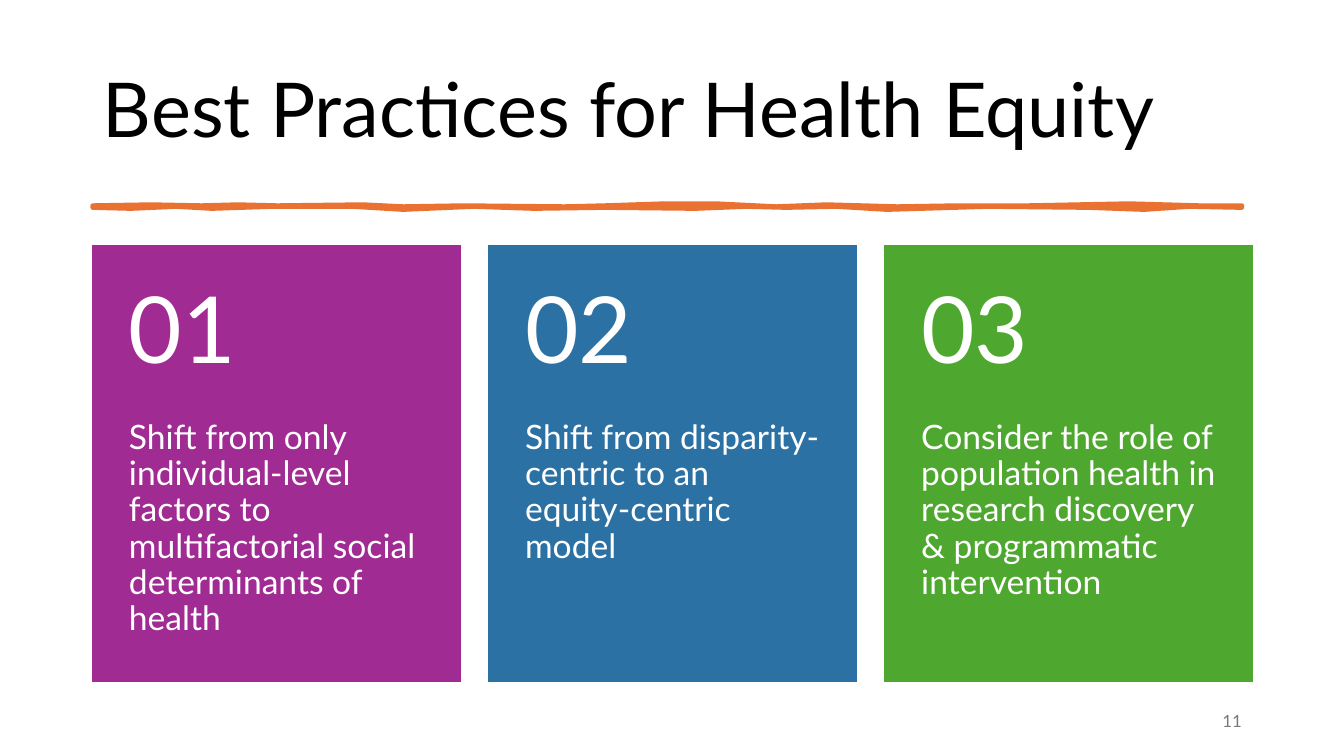
"""Build the slide on best practices for health equity."""
from lxml import etree
from pptx import Presentation
from pptx import util as u
from pptx.dml.color import RGBColor
from pptx.enum import shapes, text
from pptx.oxml.ns import qn

FONT = "Lato"
COLORS = {
    "black": "000000", "white": "FFFFFF", "grey": "797979", "orange": "E97132",
    "purple": "A02B93", "blue": "2C71A4", "green": "4EA72E",
}
PRACTICES = [
    ("purple", "Shift from only individual-level factors to multifactorial social determinants of health"),
    ("blue", "Shift from disparity-centric to an equity-centric model"),
    ("green", "Consider the role of population health in research discovery & programmatic intervention"),
]
CARD_LEFT, CARD_TOP, CARD_WIDTH, CARD_HEIGHT, CARD_STEP = 0.92, 2.44, 3.64, 4.32, 3.93
NUMBER_HEIGHT = 1.73
RULE_OUTLINE = [
    (0.92, 2.04), (1.5, 2.03), (2, 2.04), (2.36, 2.03), (2.75, 2.04), (3.6, 2.03),
    (4, 2.05), (4.6, 2.04), (5.6, 2.05), (6, 2.04), (6.6, 2.02), (7.1, 2.02),
    (7.7, 2.05), (8.2, 2.03), (8.9, 2.05), (9.5, 2.04), (10.2, 2.04),
    (11.2, 2.02), (11.9, 2.04), (12.32, 2.04),
    (12.32, 2.06), (11.8, 2.05), (11.35, 2.08), (10.8, 2.06), (9.8, 2.05),
    (8.8, 2.08), (8.3, 2.05), (7.8, 2.06), (7.4, 2.05), (6.9, 2.07), (6, 2.06),
    (5.3, 2.07), (4.7, 2.05), (4, 2.08), (3.5, 2.05), (2.7, 2.05), (2.1, 2.07),
    (1.75, 2.05), (1.3, 2.07), (0.92, 2.06),
]


def color(name):
    """Return the named colour."""
    return RGBColor.from_string(COLORS[name])


def write_text(shape, words, size, ink="white", align=text.PP_ALIGN.LEFT,
               anchor=text.MSO_ANCHOR.MIDDLE, insets=(0.1, 0.05, 0.1, 0.05), spacing=0.9):
    """Put one formatted paragraph into a shape."""
    frame = shape.text_frame
    frame.word_wrap = True
    frame.auto_size = text.MSO_AUTO_SIZE.NONE
    frame.vertical_anchor = anchor
    (frame.margin_left, frame.margin_top,
     frame.margin_right, frame.margin_bottom) = map(u.Inches, insets)
    paragraph = frame.paragraphs[0]
    paragraph.alignment = align
    paragraph.line_spacing = spacing
    run = paragraph.add_run()
    run.text = words
    run.font.name = FONT
    run.font.size = u.Pt(size)
    run.font.color.rgb = color(ink)


def paint(shape, name, line_width, join):
    """Give a shape one colour for its fill and line, and a line join."""
    shape.shadow.inherit = False
    shape.fill.solid()
    shape.fill.fore_color.rgb = color(name)
    shape.line.color.rgb = color(name)
    shape.line.width = u.Pt(line_width)
    etree.SubElement(shape.line._get_or_add_ln(), qn(f"a:{join}"))


def add_title(slide, words):
    """Place and fill the title placeholder."""
    title = slide.shapes.title
    title.left, title.top, title.width, title.height = map(u.Inches, (0.92, 0.4, 11.5, 1.45))
    write_text(title, words, 54, ink="black")


def add_brush_rule(slide):
    """Draw the uneven brush line below the title."""
    outline = [(u.Inches(x), u.Inches(y)) for x, y in RULE_OUTLINE]
    builder = slide.shapes.build_freeform(*outline[0])
    builder.add_line_segments(outline[1:], close=True)
    paint(builder.convert_to_shape(), "orange", 3.25, "round")


def add_card(cards, index, fill, words):
    """Add a numbered card to the group of cards."""
    left = CARD_LEFT + index * CARD_STEP
    panel = cards.add_shape(shapes.MSO_SHAPE.RECTANGLE,
                            *map(u.Inches, (left, CARD_TOP, CARD_WIDTH, CARD_HEIGHT)))
    paint(panel, fill, 1.5, "miter")
    body = cards.add_textbox(*map(u.Inches, (left, CARD_TOP + NUMBER_HEIGHT,
                                             CARD_WIDTH, CARD_HEIGHT - NUMBER_HEIGHT)))
    write_text(body, words, 24, anchor=text.MSO_ANCHOR.TOP, insets=(0.36, 0, 0.36, 0.36))
    number = cards.add_textbox(*map(u.Inches, (left, CARD_TOP, CARD_WIDTH, NUMBER_HEIGHT)))
    write_text(number, f"{index + 1:02d}", 66, insets=(0.36, 0.18, 0.36, 0.18))


def add_page_number(slide, number):
    """Add the page number at the lower right."""
    box = slide.shapes.add_textbox(*map(u.Inches, (9.42, 6.95, 3, 0.4)))
    write_text(box, number, 12, ink="grey", align=text.PP_ALIGN.RIGHT, spacing=1.0)


def main():
    """Build and save the presentation."""
    presentation = Presentation()
    presentation.slide_width = u.Inches(40 / 3)
    presentation.slide_height = u.Inches(7.5)
    slide = presentation.slides.add_slide(presentation.slide_layouts.get_by_name("Title Only"))
    slide.background.fill.solid()
    slide.background.fill.fore_color.rgb = color("white")
    add_title(slide, "Best Practices for Health Equity")
    add_brush_rule(slide)
    cards = slide.shapes.add_group_shape().shapes
    for index, (fill, words) in enumerate(PRACTICES):
        add_card(cards, index, fill, words)
    add_page_number(slide, "11")
    presentation.save("out.pptx")


if __name__ == "__main__":
    main()
